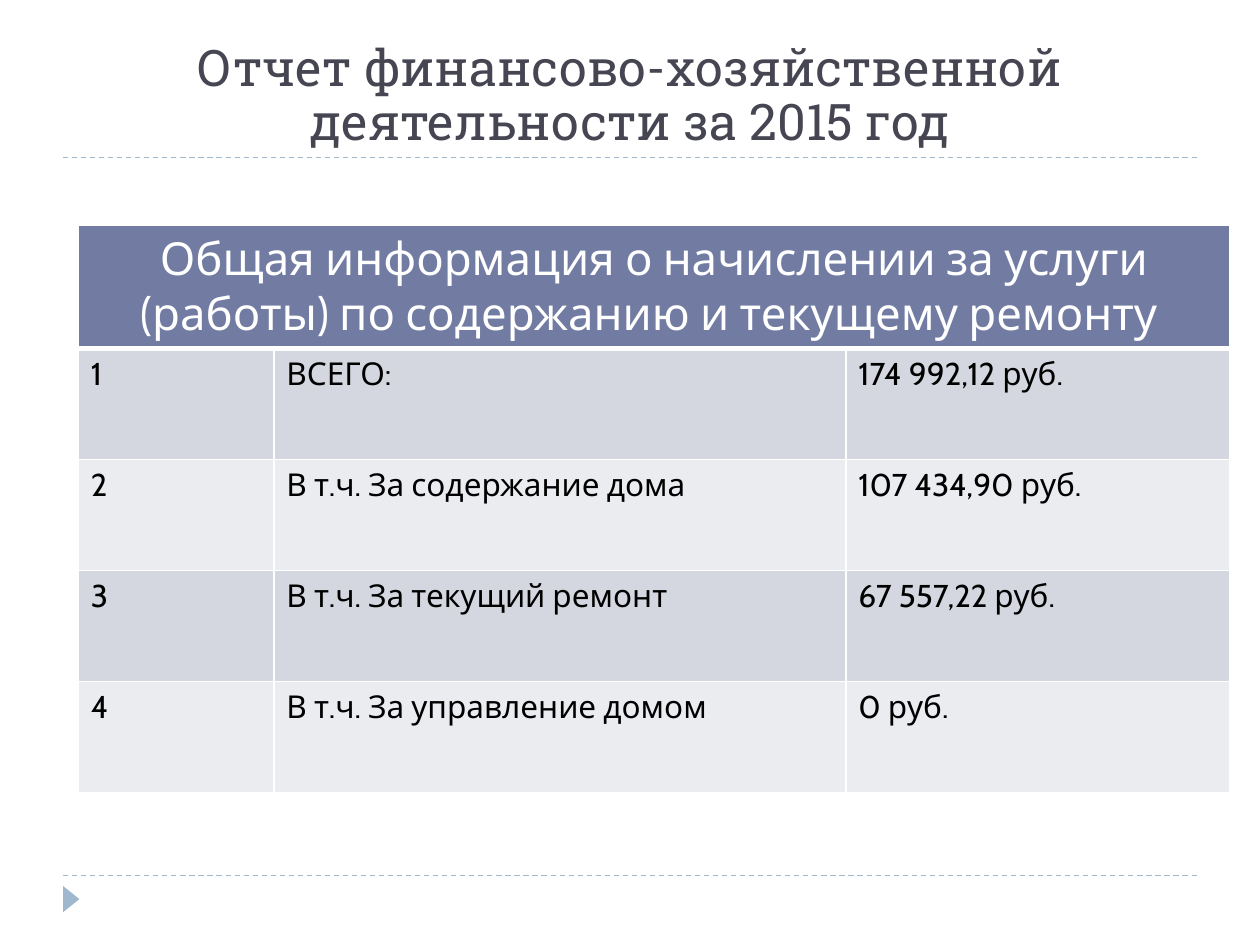
from lxml import etree
from pptx import Presentation
from pptx import util as u
from pptx.dml.color import RGBColor
from pptx.enum import dml, shapes, text
from pptx.oxml.ns import qn

COLORS = {
    "title": "464653",
    "accent": "9FB8CD",
    "header": "727CA3",
    "odd": "D5D7E0",
    "even": "EBECF0",
    "white": "FFFFFF",
    "black": "000000",
}
HEADING = "Отчет финансово-хозяйственной деятельности за 2015 год"
TABLE_HEADER = ("Общая информация о начислении за услуги (работы) "
                "по содержанию и текущему ремонту ")
CHARGES = [
    ("ВСЕГО:", "174 992,12 руб."),
    ("В т.ч. За содержание дома", "107 434,90 руб."),
    ("В т.ч. За текущий ремонт", "67 557,22 руб."),
    ("В т.ч. За управление домом", "0 руб."),
]


class SlideBuilder:
    title_font = "Roboto Slab"
    body_font = "Cabin"

    def __init__(self, slide):
        self.slide = slide

    @staticmethod
    def color(name):
        return RGBColor.from_string(COLORS[name])

    def format_text(self, frame, font, size, color, align):
        for paragraph in frame.paragraphs:
            paragraph.alignment = align
            for run in paragraph.runs:
                run.font.name = font
                run.font.size = u.Pt(size)
                run.font.bold = False
                run.font.color.rgb = self.color(color)

    def title(self, content, left, top, width, height):
        heading = self.slide.shapes.title
        heading.left, heading.top = u.Cm(left), u.Cm(top)
        heading.width, heading.height = u.Cm(width), u.Cm(height)
        frame = heading.text_frame
        frame.text = content
        frame.word_wrap = True
        frame.auto_size = text.MSO_AUTO_SIZE.NONE
        frame.vertical_anchor = text.MSO_ANCHOR.BOTTOM
        frame.paragraphs[0].line_spacing = 0.9
        frame.paragraphs[0].space_before = u.Pt(0)
        self.format_text(frame, self.title_font, 28.8, "title", text.PP_ALIGN.CENTER)

    def dashed_rule(self, left, right, y):
        rule = self.slide.shapes.add_connector(
            shapes.MSO_CONNECTOR.STRAIGHT, u.Cm(left), u.Cm(y), u.Cm(right), u.Cm(y))
        rule.line.color.rgb = self.color("accent")
        rule.line.width = u.Pt(0.75)
        rule.line.dash_style = dml.MSO_LINE.DASH
        etree.SubElement(rule._element.spPr, qn("a:effectLst"))

    def marker(self, left, top, width, height):
        """Add a triangle that points right."""
        triangle = self.slide.shapes.add_shape(
            shapes.MSO_SHAPE.ISOSCELES_TRIANGLE,
            u.Cm(left), u.Cm(top), u.Cm(width), u.Cm(height))
        triangle.rotation = 90
        triangle.shadow.inherit = False
        triangle.fill.solid()
        triangle.fill.fore_color.rgb = self.color("accent")
        triangle.line.fill.background()

    def borders(self, cell, bottom):
        """Draw white borders; call before the fill, which must follow them."""
        properties = cell._tc.get_or_add_tcPr()
        for side, points in (("L", 1), ("R", 1), ("T", 1), ("B", bottom)):
            border = etree.SubElement(properties, qn(f"a:ln{side}"), w=str(u.Pt(points)))
            fill = etree.SubElement(border, qn("a:solidFill"))
            etree.SubElement(fill, qn("a:srgbClr"), val=COLORS["white"])

    def cell(self, cell, content, fill, size=18, color="black",
             align=text.PP_ALIGN.LEFT, bottom=1):
        self.borders(cell, bottom)
        cell.fill.solid()
        cell.fill.fore_color.rgb = self.color(fill)
        cell.text_frame.text = content
        self.format_text(cell.text_frame, self.body_font, size, color, align)

    def charges_table(self, header, charges, left, top, columns, header_height, row_height):
        table = self.slide.shapes.add_table(
            len(charges) + 1, len(columns), u.Cm(left), u.Cm(top), u.Cm(sum(columns)),
            u.Cm(header_height + row_height * len(charges))).table
        for column, width in zip(table.columns, columns):
            column.width = u.Cm(width)
        for row in table.rows:
            row.height = u.Cm(row_height)
        table.rows[0].height = u.Cm(header_height)

        table.cell(0, 0).merge(table.cell(0, len(columns) - 1))
        self.cell(table.cell(0, 0), header, "header", 26, "white",
                  text.PP_ALIGN.CENTER, bottom=3)
        for number, charge in enumerate(charges, start=1):
            fill = "odd" if number % 2 else "even"
            for column, content in enumerate((str(number), *charge)):
                self.cell(table.cell(number, column), content, fill)


def main():
    presentation = Presentation()
    presentation.slide_width, presentation.slide_height = u.Cm(25.4), u.Cm(19.05)
    title_only = presentation.slide_layouts[5]
    builder = SlideBuilder(presentation.slides.add_slide(title_only))

    for y in (17.65, 3.18):
        builder.dashed_rule(1.27, 24.13, y)
    builder.marker(1.17, 17.96, 0.53, 0.33)
    builder.title(HEADING, 1.27, 0.64, 22.86, 2.54)
    builder.charges_table(TABLE_HEADER, CHARGES, left=1.58, top=4.54,
                          columns=(3.94, 11.53, 7.75),
                          header_height=2.29, row_height=2.24)
    presentation.save("out.pptx")


if __name__ == "__main__":
    main()
